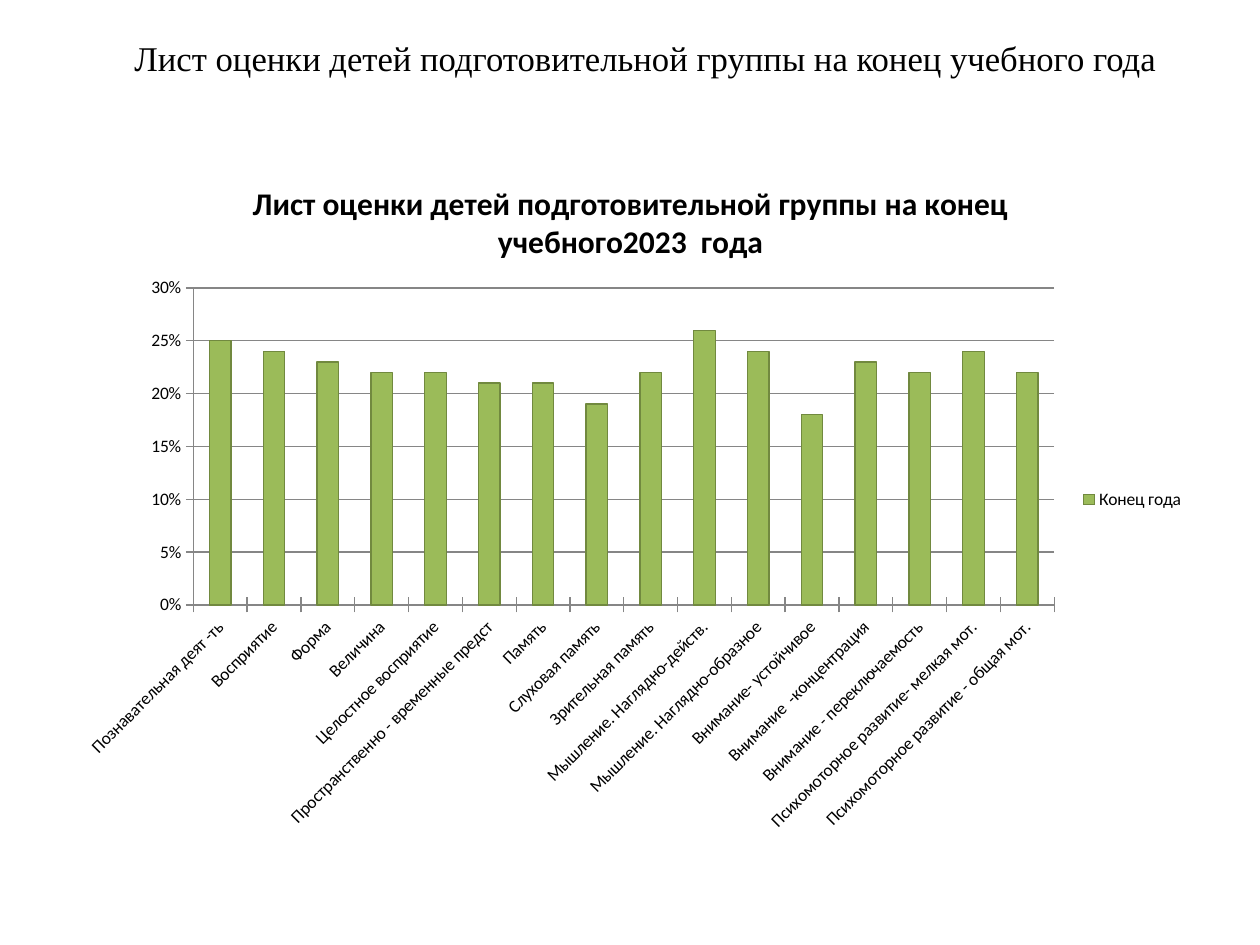
"""Build a slide with a column chart of the year-end assessment of a preschool group."""
from lxml import etree
from pptx import Presentation
from pptx.chart.data import CategoryChartData
from pptx.dml.color import RGBColor
from pptx.enum import chart as ch, text
from pptx.oxml import ns
from pptx.util import Inches, Pt

BLACK = RGBColor(0, 0, 0)
GREEN = RGBColor(0x9B, 0xBB, 0x59)
DARK_GREEN = RGBColor(0x71, 0x89, 0x3F)
GRAY = RGBColor(0x86, 0x86, 0x86)

HEADING = "Лист оценки детей подготовительной группы на конец учебного года"
CHART_TITLE = "Лист оценки детей подготовительной группы на конец учебного2023  года"
SERIES = "Конец года"
SCORES = [
    ("Познавательная деят -ть", 0.25),
    ("Восприятие", 0.24),
    ("Форма", 0.23),
    ("Величина", 0.22),
    ("Целостное восприятие", 0.22),
    ("Пространственно - временные предст", 0.21),
    ("Память", 0.21),
    ("Слуховая память", 0.19),
    ("Зрительная память", 0.22),
    ("Мышление. Наглядно-действ.", 0.26),
    ("Мышление. Наглядно-образное", 0.24),
    ("Внимание- устойчивое", 0.18),
    ("Внимание  -концентрация", 0.23),
    ("Внимание - переключаемость", 0.22),
    ("Психомоторное развитие- мелкая мот.", 0.24),
    ("Психомоторное развитие - общая мот.", 0.22),
]
PLOT_AREA = {"x": 0.114, "y": 0.193, "w": 0.76, "h": 0.46}


def write(tf, content, size=10, font="Calibri", bold=False, align=None):
    p = tf.paragraphs[0]
    p.alignment = align
    r = p.add_run()
    r.text = content
    r.font.size, r.font.name, r.font.bold = Pt(size), font, bold
    r.font.color.rgb = BLACK


def set_plot_area(chart, box):
    area = chart._chartSpace.chart.plotArea
    for old in area.findall(ns.qn("c:layout")):
        area.remove(old)
    layout = etree.Element(ns.qn("c:layout"))
    manual = etree.SubElement(layout, ns.qn("c:manualLayout"))
    settings = [("layoutTarget", "inner"), ("xMode", "edge"), ("yMode", "edge")]
    for tag, val in settings + list(box.items()):
        etree.SubElement(manual, ns.qn(f"c:{tag}")).set("val", str(val))
    area.insert(0, layout)


def add_scores(s):
    data = CategoryChartData(number_format="0%")
    data.categories = [name for name, _ in SCORES]
    data.add_series(SERIES, [score for _, score in SCORES])
    chart = s.shapes.add_chart(ch.XL_CHART_TYPE.COLUMN_CLUSTERED, Inches(0.51), Inches(1.23),
                               Inches(8.99), Inches(5.47), data).chart
    chart.font.name, chart.font.size = "Calibri", Pt(10)
    chart.font.color.rgb = BLACK
    write(chart.chart_title.text_frame, CHART_TITLE, size=18, bold=True)
    chart.chart_title.include_in_layout = False
    chart.has_legend = True
    chart.legend.position = ch.XL_LEGEND_POSITION.RIGHT
    chart.legend.include_in_layout = False

    plot = chart.plots[0]
    plot.gap_width, plot.vary_by_categories = 150, False
    bars = plot.series[0].format
    bars.fill.solid()
    bars.fill.fore_color.rgb = GREEN
    bars.line.color.rgb = DARK_GREEN
    bars.line.width = Pt(0.75)

    values, names = chart.value_axis, chart.category_axis
    values.minimum_scale, values.maximum_scale, values.major_unit = 0, 0.3, 0.05
    values.tick_labels.number_format = "0%"
    values.tick_labels.number_format_is_linked = False
    values.has_major_gridlines = True
    for axis in (values, names):
        axis.major_tick_mark = ch.XL_TICK_MARK.CROSS
    for part in (values, names, values.major_gridlines):
        part.format.line.color.rgb = GRAY
        part.format.line.width = Pt(0.75)
    names.tick_labels.font.size = Pt(10)
    names._element.find(ns.qn("c:txPr")).find(ns.qn("a:bodyPr")).set("rot", "-2700000")
    set_plot_area(chart, PLOT_AREA)


def main():
    prs = Presentation()
    prs.slide_width, prs.slide_height = Inches(10), Inches(7.5)
    s = prs.slides.add_slide(prs.slide_layouts[6])
    tf = s.shapes.add_textbox(Inches(0.75), Inches(0.29), Inches(8.74), Inches(0.94)).text_frame
    tf.word_wrap = True
    tf.margin_top = 0
    tf.vertical_anchor = text.MSO_ANCHOR.TOP
    write(tf, HEADING, size=19.8, font="Times New Roman", align=text.PP_ALIGN.CENTER)
    add_scores(s)
    prs.save("out.pptx")


if __name__ == "__main__":
    main()
